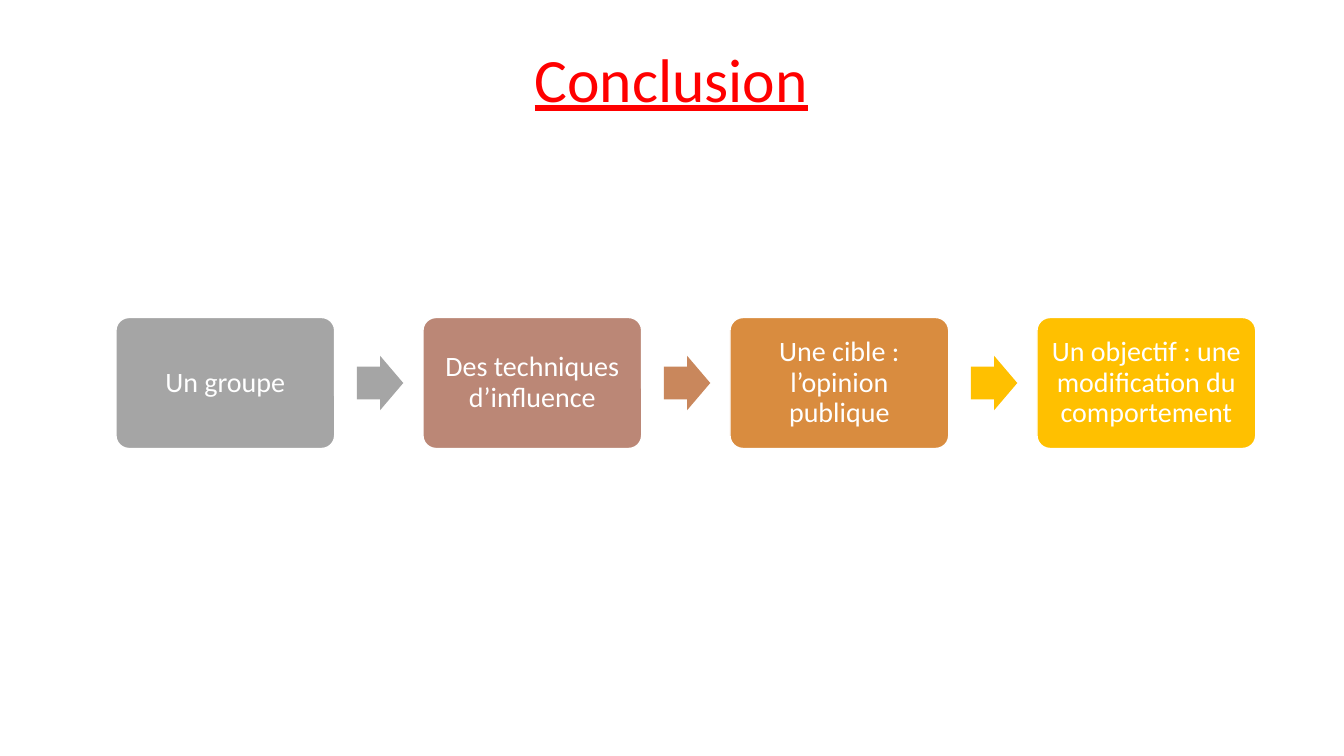
from pptx import Presentation
from pptx.dml.color import RGBColor as Rgb
from pptx.enum.shapes import MSO_SHAPE as Kind
from pptx.enum.text import MSO_ANCHOR as Anchor, PP_ALIGN as Align
from pptx.util import Inches, Pt

INK = {"title": "FF0000", "white": "FFFFFF", "grey": "A5A5A5", "rose": "BB8776",
       "clay": "C9875C", "orange": "D98C3F", "gold": "FFC000"}

# Each step: text, box colour, colour of the arrow that follows
STEPS = [
    ("Un groupe", "grey", "grey"),
    ("Des techniques d’influence", "rose", "clay"),
    ("Une cible : l’opinion publique", "orange", "gold"),
    ("Un objectif : une modification du comportement", "gold", None),
]

# Grid in inches: equal columns on one centre line
LEFT, PITCH, MID = 1.15, 3.045, 3.8
BOX_W, BOX_H = 2.17, 1.3
ARROW_X, ARROW_W, ARROW_H = 2.39, 0.46, 0.54


def write(frame, text, size, color, inset=0.08, wrap=True, line=False, space=1.0):
    frame.word_wrap = wrap
    frame.vertical_anchor = Anchor.MIDDLE
    frame.margin_left = frame.margin_right = Inches(inset)
    frame.margin_top = frame.margin_bottom = Inches(inset)
    para = frame.paragraphs[0]
    para.alignment = Align.CENTER
    para.line_spacing = space
    run = para.add_run()
    run.text = text
    font = run.font
    font.name, font.size, font.underline = "Calibri", Pt(size), line
    font.color.rgb = Rgb.from_string(INK[color])


def draw(kind, x, wide, high, color, adjust):
    shape = slide.shapes.add_shape(kind, Inches(x), Inches(MID - high / 2),
                                   Inches(wide), Inches(high))
    shape.shadow.inherit = False
    shape.fill.solid()
    shape.fill.fore_color.rgb = Rgb.from_string(INK[color])
    shape.line.fill.background()
    for i, value in enumerate(adjust):
        shape.adjustments[i] = value
    return shape


deck = Presentation()
deck.slide_width, deck.slide_height = Inches(13.33), Inches(7.5)
slide = deck.slides.add_slide(deck.slide_layouts[5])

# Title
title = slide.shapes.title
title.left, title.top = Inches(5.19), Inches(0.35)
title.width, title.height = Inches(2.94), Inches(0.84)
write(title.text_frame, "Conclusion", 44, "title", inset=0.05, wrap=False, line=True)

# Chain of boxes and arrows
for col, (text, fill, next_fill) in enumerate(STEPS):
    x = LEFT + col * PITCH
    box = draw(Kind.ROUNDED_RECTANGLE, x, BOX_W, BOX_H, fill, [0.1])
    box.line.color.rgb = Rgb.from_string(INK["white"])
    box.line.width = Pt(1)
    write(box.text_frame, text, 20, "white", space=0.9)
    if next_fill:
        draw(Kind.RIGHT_ARROW, x + ARROW_X, ARROW_W, ARROW_H, next_fill, [0.6, 0.5])

deck.save("out.pptx")
